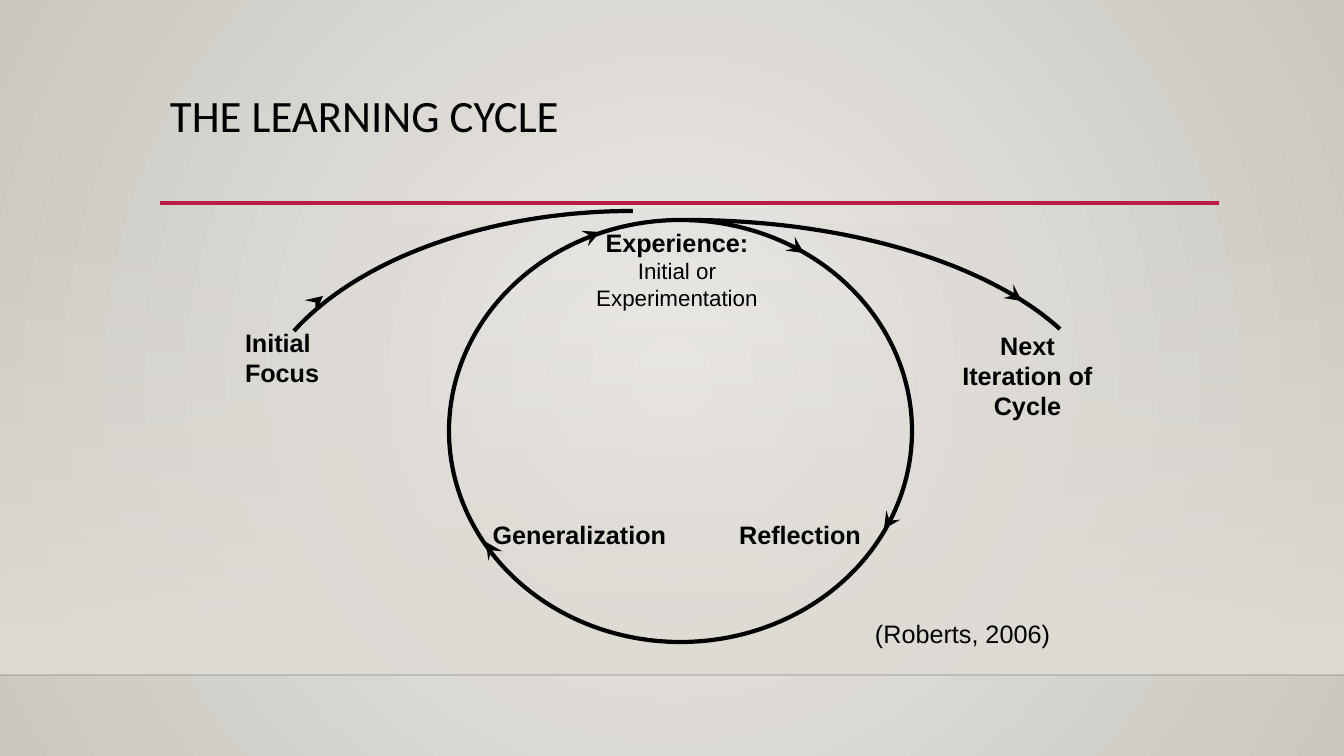
from lxml import etree
from pptx import Presentation
from pptx.dml.color import RGBColor
from pptx.enum.shapes import MSO_CONNECTOR, MSO_SHAPE
from pptx.enum.text import PP_ALIGN
from pptx.oxml.ns import qn
from pptx.util import Pt

PX = 914400 / 100.8
WIDE, HIGH = 1344, 756
BLACK = RGBColor(0x00, 0x00, 0x00)
EDGE = RGBColor(0x00, 0x00, 0x01)
RED = RGBColor(0xB7, 0x1E, 0x42)
LIGHT = RGBColor(0xEC, 0xEA, 0xE7)
DARK = RGBColor(0xCA, 0xC7, 0xC1)
SAND = RGBColor(0xDF, 0xDB, 0xD5)
LEFT, MID = PP_ALIGN.LEFT, PP_ALIGN.CENTER
STRAIGHT = MSO_CONNECTOR.STRAIGHT
RECT, OVAL = MSO_SHAPE.RECTANGLE, MSO_SHAPE.OVAL

deck = Presentation()
deck.slide_width, deck.slide_height = round(WIDE * PX), round(HIGH * PX)
slide = deck.slides.add_slide(deck.slide_layouts[6])
shapes = slide.shapes


def add_text(box, *lines, size=18, bold=True, align=MID, font="Arial", inset=(0, 0), space=1):
    """Each line is a text, or a (text, size, bold) tuple that overrides the format."""
    frame = shapes.add_textbox(*[round(n * PX) for n in box]).text_frame
    frame.word_wrap = True
    frame.margin_left = frame.margin_right = round(inset[0] * PX)
    frame.margin_top = frame.margin_bottom = round(inset[1] * PX)
    for i, line in enumerate(lines):
        words, points, heavy = line if isinstance(line, tuple) else (line, size, bold)
        para = frame.paragraphs[0] if i == 0 else frame.add_paragraph()
        para.alignment, para.line_spacing = align, space
        run = para.add_run()
        run.text = words
        run.font.name, run.font.size, run.font.bold = font, Pt(points), heavy
        run.font.color.rgb = BLACK


def add_line(ends, color, width):
    line = shapes.add_connector(STRAIGHT, *[round(n * PX) for n in ends])
    line.line.color.rgb = color
    line.line.width = Pt(width)
    etree.SubElement(line._element.spPr, qn("a:effectLst"))
    return line


# Background: light at the centre, darker at the edges
back = slide.background.fill
back.gradient()
for stop, color in zip(back.gradient_stops, (LIGHT, DARK)):
    stop.color.rgb = color
grad = slide.background._cSld.find(".//" + qn("a:gradFill"))
grad.remove(grad.find(qn("a:lin")))
ring = etree.SubElement(grad, qn("a:path"), path="circle")
etree.SubElement(ring, qn("a:fillToRect"), l="50000", t="50000", r="50000", b="50000")

# Wall panel fading in towards the floor line
wall = shapes.add_shape(RECT, 0, round(223 * PX), deck.slide_width, round(452 * PX))
wall.shadow.inherit = False
wall.line.fill.background()
wall.fill.gradient()
wall.fill.gradient_angle = 270
for stop, place in zip(wall.fill.gradient_stops, (0, 1)):
    stop.color.rgb, stop.position = SAND, place
clear = wall._element.spPr.find(".//" + qn("a:srgbClr"))
etree.SubElement(clear, qn("a:alpha"), val="0")

floor = add_line((0, 675, WIDE, 675), EDGE, 1)
tint = floor._element.spPr.find(".//" + qn("a:srgbClr"))
etree.SubElement(tint, qn("a:alpha"), val="20000")
add_line((160, 203, 1219, 203), RED, 2.5)

add_text((160, 89, 1058, 116), "THE LEARNING CYCLE", size=32, bold=False, align=LEFT,
         font="Calibri", inset=(10, 5), space=0.9)

# Cycle and the two arcs that lead in and out
cycle = shapes.add_shape(OVAL, *[round(n * PX) for n in (449, 220, 463, 422)])
outlines = [cycle]
ARCS = [
    ((294, 331), (361, 257), (492, 211), (633, 211)),
    ((1060, 329), (986, 262), (844, 220), (688, 220)),
]
STEPS = 40
for arc in ARCS:
    dots = []
    for i in range(STEPS + 1):
        t = i / STEPS
        parts = ((1 - t) ** 3, 3 * t * (1 - t) ** 2, 3 * t * t * (1 - t), t ** 3)
        dots.append(tuple(round(PX * sum(w * p[k] for w, p in zip(parts, arc))) for k in (0, 1)))
    pen = shapes.build_freeform(*dots[0])
    pen.add_line_segments(dots[1:], close=False)
    outlines.append(pen.convert_to_shape())
for curve in outlines:
    curve.shadow.inherit = False
    curve.fill.background()
    curve.line.color.rgb = BLACK
    curve.line.width = Pt(3)

ARROWS = [
    (317, 301, 323, 296), (1015, 296, 1022, 301), (593, 235, 600, 232),
    (888, 523, 884, 529), (490, 548, 486, 542), (798, 249, 804, 253),
]
for ends in ARROWS:
    arrow = add_line(ends, BLACK, 4)
    etree.SubElement(arrow.line._get_or_add_ln(), qn("a:tailEnd"), type="stealth")

add_text((587, 227, 180, 81), "Experience:", ("Initial or Experimentation", 16, False))
add_text((736, 519, 128, 35), "Reflection")
add_text((492, 519, 175, 35), "Generalization")
add_text((235, 322, 108, 75), "Initial Focus", align=LEFT, inset=(10, 5))
add_text((950, 325, 155, 107), "Next Iteration of Cycle", inset=(10, 5))
add_text((865, 613, 285, 40), "(Roberts, 2006)", bold=False, align=LEFT, inset=(10, 5))

deck.save("out.pptx")
